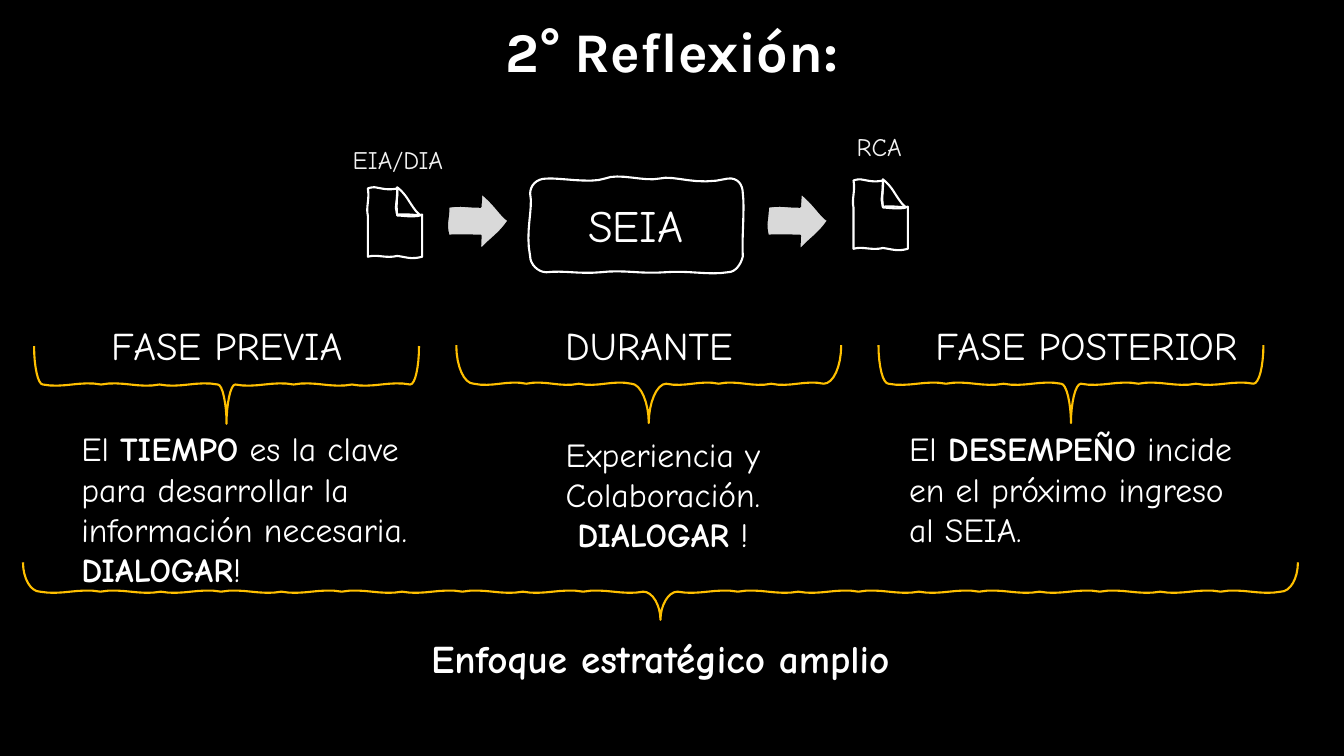
from pptx import Presentation
from pptx import util as u
from pptx.dml.color import RGBColor
from pptx.enum import shapes, text


class Theme:
    black = RGBColor(0, 0, 0)
    white = RGBColor(255, 255, 255)
    pale = RGBColor(0xF2, 0xF2, 0xF2)
    gray = RGBColor(0xD9, 0xD9, 0xD9)
    gold = RGBColor(0xFF, 0xC0, 0)
    head, hand = "Karla", "Comic Neue"
    title, name, phase, body, label = 40, 32, 28, 24, 18
    line = 1.5


def draw(left, top, start, parts, color, fill=None, close=True):
    dots, pen = [], start
    for part in parts:
        if len(part) == 2:
            dots.append(part)
        else:
            a, b, c = part[:2], part[2:4], part[4:]
            for step in range(1, 9):
                t = step / 8
                s = 1 - t
                dots.append(tuple(
                    s**3 * pen[i] + 3 * s * s * t * a[i] + 3 * s * t * t * b[i] + t**3 * c[i]
                    for i in (0, 1)))
        pen = part[-2:]
    unit = 1000
    path = page.shapes.build_freeform(
        (left + start[0]) * unit, (top + start[1]) * unit, u.Cm(1) / unit)
    path.add_line_segments([((left + x) * unit, (top + y) * unit) for x, y in dots], close=close)
    shape = path.convert_to_shape()
    shape.shadow.inherit = False
    if fill is None:
        shape.fill.background()
    else:
        shape.fill.solid()
        shape.fill.fore_color.rgb = fill
    shape.line.color.rgb = color
    shape.line.width = u.Pt(Theme.line)
    return shape


def write(shape, size, lines, align=text.PP_ALIGN.CENTER, font=Theme.hand, color=Theme.white, wrap=True):
    frame = shape.text_frame
    frame.word_wrap = wrap
    if not wrap:
        frame.auto_size = text.MSO_AUTO_SIZE.SHAPE_TO_FIT_TEXT
    for i, line in enumerate(lines):
        para = frame.add_paragraph() if i else frame.paragraphs[0]
        para.alignment = align
        for words, bold in line:
            run = para.add_run()
            run.text = words
            run.font.size = u.Pt(size)
            run.font.name = font
            run.font.bold = bold
            run.font.color.rgb = color


deck = Presentation()
deck.slide_width, deck.slide_height = u.Cm(33.87), u.Cm(19.05)
page = deck.slides.add_slide(deck.slide_layouts[6])
page.background.fill.solid()
page.background.fill.fore_color.rgb = Theme.black
left = text.PP_ALIGN.LEFT
mid = text.PP_ALIGN.CENTER

title = page.shapes.add_textbox(u.Cm(0), u.Cm(0.3), u.Cm(33.87), u.Cm(2.08))
write(title, Theme.title, [[("2° Reflexión:", True)]], font=Theme.head)

fold = [(0.99, 0.2, 1.02, 0.36, 1.22, 0.61), (1.32, 0.71),
        (1.14, 0.76, 0.84, 0.71, 0.74, 0.71), (0.71, 0.43, 0.74, 0.28, 0.74, 0)]
sheet = [(0.36, 0.03, 0.51, 0.08, 0.74, 0.03), (0.76, 0.23, 0.71, 0.38, 0.71, 0.53),
         (0.74, 0.69), (1.02, 0.66, 1.2, 0.72, 1.37, 0.69), (1.37, 1.75),
         (1.09, 1.83, 0.94, 1.75, 0.74, 1.73), (0.46, 1.8, 0.23, 1.68, 0, 1.75),
         (0, 1.5, 0, 1.2, 0, 0.71), (-0.05, 0.51, 0.05, 0.28, 0, 0.03),
         (0.08, 0, 0.13, 0, 0.18, 0)]
arrow = [(0.36, 0.3, 0.41, 0.36, 0.81, 0.36), (0.81, 0.25, 0.84, 0.13, 0.81, 0),
         (1.17, 0.28, 1.32, 0.58, 1.52, 0.71), (1.27, 1.07, 1.09, 1.14, 0.81, 1.45),
         (0.79, 1.35, 0.81, 1.24, 0.81, 1.09), (0.58, 1.09, 0.36, 1.07, 0, 1.09),
         (-0.08, 0.76, 0, 0.71, 0, 0.36)]
frame = [(0, 0.18, 0.15, 0, 0.41, 0), (0.71, -0.03, 1.52, 0.13, 1.88, 0),
         (2.24, -0.15, 2.87, 0.08, 3.25, 0), (3.66, -0.1, 4.17, 0.2, 4.98, 0),
         (5.23, -0.03, 5.36, 0.15, 5.36, 0.38), (5.41, 0.74, 5.33, 1.52, 5.36, 1.96),
         (5.31, 2.16, 5.18, 2.36, 4.98, 2.36), (4.5, 2.44, 3.99, 2.31, 3.4, 2.36),
         (2.79, 2.41, 2.36, 2.29, 1.78, 2.36), (1.22, 2.41, 0.86, 2.31, 0.41, 2.36),
         (0.2, 2.36, 0, 2.16, 0, 1.96), (-0.13, 1.32, 0.08, 0.76, 0, 0.38)]

for x, y, tag, tx, ty, wide, ax in (
        (9.27, 4.72, "EIA/DIA", 8.64, 3.5, 2.79, 11.3),
        (21.51, 4.52, "RCA", 21.34, 3.18, 1.83, 19.35)):
    draw(x, y, (0.74, 0), fold, Theme.white)
    draw(x, y, (0.18, 0), sheet, Theme.white)
    draw(ax, 4.85, (0, 0.36), arrow, Theme.black, Theme.gray)
    label = page.shapes.add_textbox(u.Cm(tx), u.Cm(ty), u.Cm(wide), u.Cm(1.02))
    write(label, Theme.label, [[(tag, False)]], left, color=Theme.pale, wrap=False)

seia = draw(13.36, 4.5, (0, 0.38), frame, Theme.white)
seia.text_frame.vertical_anchor = text.MSO_ANCHOR.MIDDLE
write(seia, Theme.name, [[("SEIA", False)]])

phases = [
    ("FASE PREVIA", 1.78, 7.87, 1.8, 10.67, left,
     [[("El ", False), ("TIEMPO", True),
       (" es la clave para desarrollar la información necesaria.", False)],
      [("DIALOGAR", True), ("!", False)]]),
    ("DURANTE", 12.42, 7.87, 12.22, 10.8, mid,
     [[("Experiencia y Colaboración.", False)], [("DIALOGAR", True), (" !", False)]]),
    ("FASE POSTERIOR", 22.89, 8.97, 22.66, 10.67, left,
     [[("El ", False), ("DESEMPEÑO", True),
       (" incide en el próximo ingreso al SEIA.", False)]]),
]
for name, x, wide, bx, by, align, lines in phases:
    head = page.shapes.add_textbox(u.Cm(x), u.Cm(7.97), u.Cm(wide), u.Cm(1.45))
    write(head, Theme.phase, [[(name, False)]])
    body = page.shapes.add_textbox(u.Cm(bx), u.Cm(by), u.Cm(8.97), u.Cm(3.33))
    write(body, Theme.body, lines, align)

focus = page.shapes.add_shape(
    shapes.MSO_SHAPE.RECTANGLE, u.Cm(9.02), u.Cm(15.85), u.Cm(15.24), u.Cm(1.45))
focus.shadow.inherit = False
focus.fill.solid()
focus.fill.fore_color.rgb = Theme.black
focus.line.fill.background()
write(focus, Theme.phase, [[("Enfoque estratégico amplio", True)]])

for x, y, wide, bar, tip, curl, waves in (
        (0.86, 8.72, 9.7, 0.97, 1.96, 0.22, 3),
        (11.5, 8.7, 9.7, 0.97, 1.96, 0.44, 3),
        (22.14, 8.7, 9.7, 0.97, 1.96, 0.25, 3),
        (0.58, 14.17, 32.13, 0.74, 1.45, 0.43, 10)):
    half = wide / 2
    span = (half - 2 * curl) / waves
    brace = [(0, bar * 0.55, curl * 0.45, bar, curl, bar)]
    for start in (curl, half + curl):
        for i in range(waves):
            a = start + i * span
            sway = 0.1 * (-1) ** i
            brace.append((a + span * 0.35, bar + sway, a + span * 0.65, bar - sway, a + span, bar))
        if start == curl:
            brace += [(half - curl * 0.45, bar, half, (bar + tip) / 2, half, tip),
                      (half, (bar + tip) / 2, half + curl * 0.45, bar, half + curl, bar)]
    brace.append((wide - curl * 0.45, bar, wide, bar * 0.55, wide, 0))
    draw(x, y, (0, 0), brace, Theme.gold, close=False)

deck.save("out.pptx")
